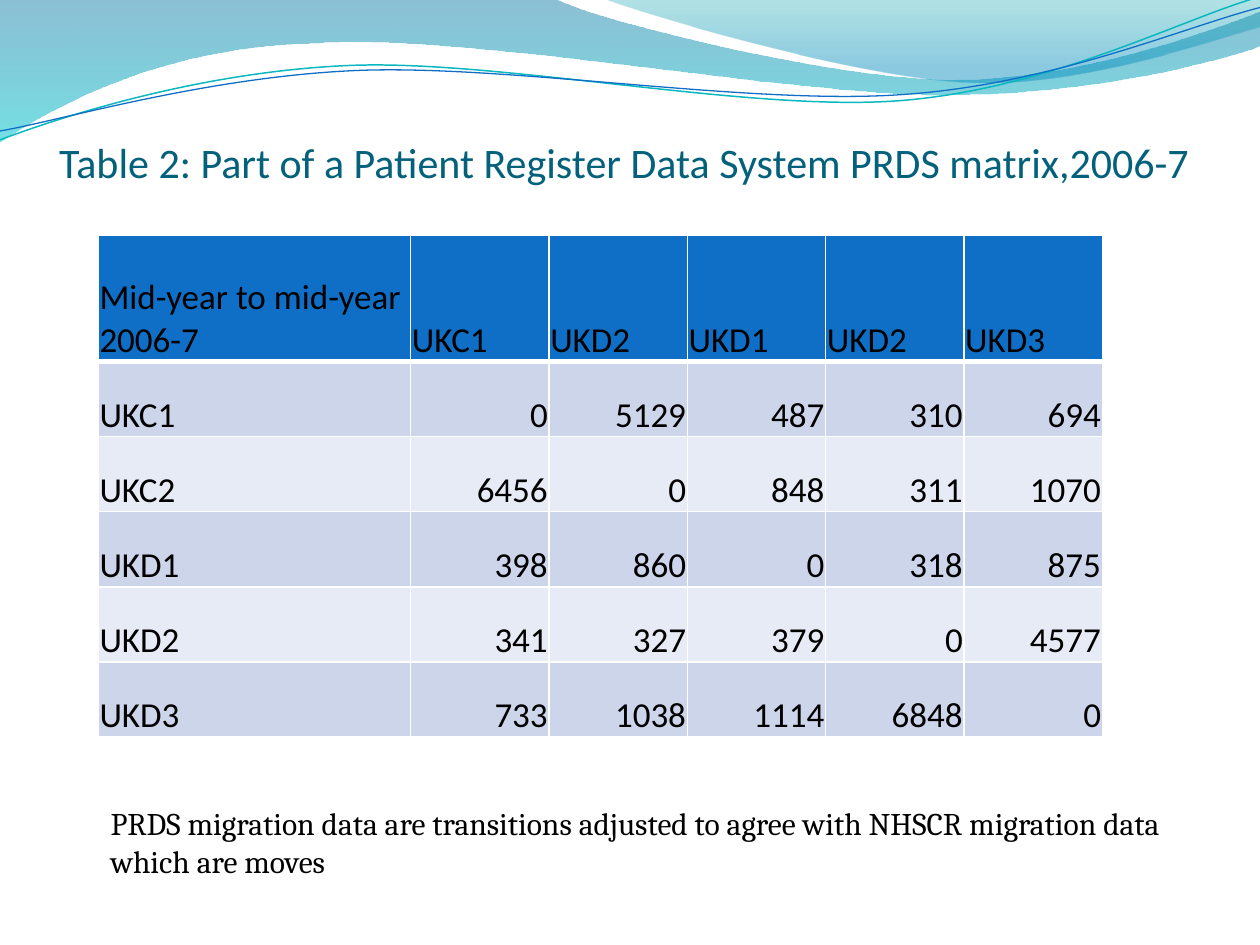
from dataclasses import dataclass
from math import cos, radians, sin
from typing import Optional

from lxml.etree import SubElement
from pptx import Presentation
from pptx.dml.color import RGBColor
from pptx.enum.text import MSO_ANCHOR, MSO_AUTO_SIZE, PP_ALIGN
from pptx.oxml.ns import qn
from pptx.util import Inches, Pt

COLS, ROWS = 10, 7.5  # the slide as a grid of one-inch squares
COLORS = {
    "title": "04617B", "text": "000000", "rule": "FFFFFF",
    "head": "0F6FC6", "odd": "CCD5EA", "even": "E7EBF5",
    "aqua": "0AB8BF", "blue": "0F6FC6",
    "deep": "0074A1", "cyan": "00C6CF", "teal": "00A1A9", "sky": "008BBF",
}


@dataclass
class Box:
    left: float
    top: float
    width: float
    height: float

    def place(self) -> list:
        return [grid(n) for n in (self.left, self.top, self.width, self.height)]


@dataclass
class Stop:
    share: float
    color: str
    alpha: int


@dataclass
class Wave:
    """Points are (x, y) for a line and (x1, y1, x2, y2, x, y) for a curve."""
    points: list
    stops: Optional[list] = None
    color: str = ""
    width: float = 0
    turn: float = 0
    hub: tuple = (0, 0)


WAVES = [
    Wave([(0, 0), (4.4, -0.01), (4.76, 0.17, 6.64, 0.63, 7.58, 0.63),
          (8.53, 0.63, 9.58, 0.26, 10, 0.09), (10.01, 0.36),
          (9.83, 0.44, 8.7, 0.76, 7.46, 0.75), (6.22, 0.75, 3.82, 0.28, 2.57, 0.34),
          (1.29, 0.36, 0.46, 0.83, -0.01, 1.13), (0, 0)],
         [Stop(0, "deep", 45), Stop(1, "cyan", 55)]),
    Wave([(4.79, -0.01), (5.09, 0.11, 6.82, 0.62, 7.69, 0.65),
          (8.56, 0.69, 9.61, 0.32, 10, 0.21), (10, 0), (4.79, -0.01)],
         [Stop(0, "teal", 30), Stop(0.8, "sky", 45)]),
    Wave([(0, 1.11), (0.48, 0.93, 1.58, 0.57, 2.77, 0.52),
          (3.95, 0.47, 5.93, 0.89, 7.13, 0.8), (8.33, 0.71, 9.38, 0.15, 9.98, -0.02)],
         color="aqua", width=0.85, turn=-2.7, hub=(4.99, 0.57)),
    Wave([(0, 1.04), (0.47, 0.96, 1.64, 0.61, 2.83, 0.56),
          (4.03, 0.51, 5.97, 0.84, 7.17, 0.75), (8.36, 0.67, 9.41, 0.21, 10, 0.06)],
         color="blue", width=0.75, turn=-2.7, hub=(5, 0.59)),
]

TITLE = "Table 2: Part of a Patient Register Data System PRDS matrix,2006-7"
NOTE = ("PRDS migration data are transitions adjusted to agree with "
        "NHSCR migration data which are moves")
HEADS = ["Mid-year to mid-year 2006-7", "UKC1", "UKD2", "UKD1", "UKD2", "UKD3"]
MOVES = [
    ("UKC1", 0, 5129, 487, 310, 694),
    ("UKC2", 6456, 0, 848, 311, 1070),
    ("UKD1", 398, 860, 0, 318, 875),
    ("UKD2", 341, 327, 379, 0, 4577),
    ("UKD3", 733, 1038, 1114, 6848, 0),
]
TITLE_BOX = Box(0.47, 0.78, 9, 0.7)
TABLE_BOX = Box(0.78, 1.87, 7.97, 3.98)
NOTE_BOX = Box(0.78, 6.33, 8.59, 0.71)


def grid(n: float) -> int:
    return Inches(n)


def tone(name: str) -> RGBColor:
    return RGBColor.from_string(COLORS[name])


def share(first: float, total: float, count: int) -> list:
    """Give the first part its size and split the rest evenly."""
    return [first] + [(total - first) / (count - 1)] * (count - 1)


def level(wave: Wave) -> list:
    """Lists of (x, y) pairs, turned back about the hub."""
    c, s = cos(radians(-wave.turn)), sin(radians(-wave.turn))
    hx, hy = wave.hub

    def spin(x: float, y: float) -> tuple:
        dx, dy = x - hx, y - hy
        return grid(hx + c * dx - s * dy), grid(hy + s * dx + c * dy)

    return [[spin(*p[i:i + 2]) for i in range(0, len(p), 2)] for p in wave.points]


def bend(shape, steps: list) -> None:
    """Turn the straight legs that have control points into Bezier curves."""
    legs = list(next(shape.element.iter(qn("a:path"))))
    for leg, pairs in zip(legs, steps):
        if len(pairs) == 3:
            leg.tag = qn("a:cubicBezTo")
            leg.remove(leg[0])
            for x, y in pairs:
                SubElement(leg, qn("a:pt"), x=str(x - shape.left), y=str(y - shape.top))


def draw_wave(slide, wave: Wave) -> None:
    steps = level(wave)
    first, *rest = [pairs[-1] for pairs in steps]
    pen = slide.shapes.build_freeform(*first)
    pen.add_line_segments(rest, close=bool(wave.stops))
    shape = pen.convert_to_shape()
    bend(shape, steps)
    shape.rotation = wave.turn
    shape.shadow.inherit = False
    if not wave.stops:
        shape.fill.background()
        shape.line.color.rgb = tone(wave.color)
        shape.line.width = Pt(wave.width)
        return
    shape.line.fill.background()
    shape.fill.gradient()
    shape.fill.gradient_angle = 270
    for stop, want in zip(shape.fill.gradient_stops, wave.stops):
        stop.position = want.share
        stop.color.rgb = tone(want.color)
    for node, want in zip(shape.element.iter(qn("a:srgbClr")), wave.stops):
        SubElement(node, qn("a:alpha"), val=str(want.alpha * 1000))


def write(frame, text: str, size: float, font: str, color: str,
          align=PP_ALIGN.LEFT) -> None:
    para = frame.paragraphs[0]
    para.alignment = align
    run = para.add_run()
    run.text = text
    run.font.size = Pt(size)
    run.font.name = font
    run.font.bold = False
    run.font.color.rgb = tone(color)


def add_rules(cell, base: float) -> None:
    for side, width in {"L": 1, "R": 1, "T": 1, "B": base}.items():
        line = SubElement(cell._tc.get_or_add_tcPr(), qn(f"a:ln{side}"),
                          w=str(Pt(width)))
        fill = SubElement(line, qn("a:solidFill"))
        SubElement(fill, qn("a:srgbClr"), val=COLORS["rule"])


def draw_table(slide) -> None:
    rows = [HEADS, *MOVES]
    table = slide.shapes.add_table(len(rows), len(HEADS), *TABLE_BOX.place()).table
    for col, width in zip(table.columns, share(2.48, TABLE_BOX.width, len(HEADS))):
        col.width = grid(width)
    for r, (row, height) in enumerate(zip(rows, share(1, TABLE_BOX.height, len(rows)))):
        table.rows[r].height = grid(height)
        shade = "head" if r == 0 else "odd" if r % 2 else "even"
        for c, value in enumerate(row):
            cell = table.cell(r, c)
            cell.margin_left = cell.margin_right = cell.margin_top = grid(0.01)
            cell.margin_bottom = 0
            cell.vertical_anchor = MSO_ANCHOR.BOTTOM
            add_rules(cell, 1 if r else 3)
            cell.fill.solid()
            cell.fill.fore_color.rgb = tone(shade)
            align = PP_ALIGN.RIGHT if r and c else PP_ALIGN.LEFT
            write(cell.text_frame, str(value), 20, "Calibri", "text", align)


def draw_title(slide) -> None:
    title = slide.shapes.title
    title.left, title.top, title.width, title.height = TITLE_BOX.place()
    frame = title.text_frame
    frame.auto_size = MSO_AUTO_SIZE.NONE
    frame.vertical_anchor = MSO_ANCHOR.BOTTOM
    frame.margin_left = frame.margin_right = frame.margin_bottom = 0
    frame.margin_top = grid(0.05)
    write(frame, TITLE, 24, "Calibri", "title")


def draw_note(slide) -> None:
    frame = slide.shapes.add_textbox(*NOTE_BOX.place()).text_frame
    frame.word_wrap = True
    frame.auto_size = MSO_AUTO_SIZE.SHAPE_TO_FIT_TEXT
    write(frame, NOTE, 18, "Cambria", "text")


deck = Presentation()
deck.slide_width, deck.slide_height = grid(COLS), grid(ROWS)
page = deck.slides.add_slide(deck.slide_layouts[5])
for item in WAVES:
    draw_wave(page, item)
draw_title(page)
draw_table(page)
draw_note(page)
deck.save("out.pptx")
